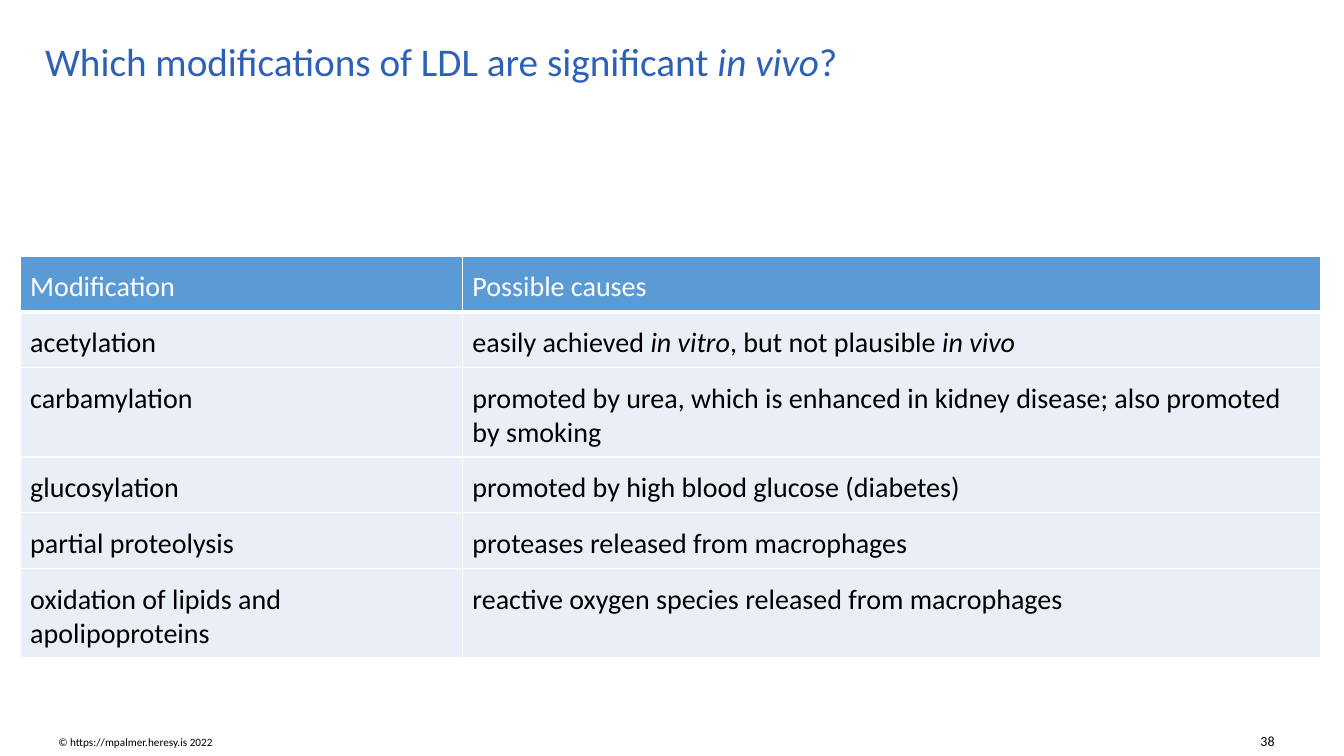
import pptx
import pptx.util
import pptx.dml.color
import pptx.enum.text
import pptx.oxml.ns
import lxml.etree

Inches = pptx.util.Inches
Pt = pptx.util.Pt
RGBColor = pptx.dml.color.RGBColor
Align = pptx.enum.text.PP_ALIGN
Anchor = pptx.enum.text.MSO_ANCHOR

TITLE_BLUE = RGBColor(0x2D, 0x61, 0xB7)
HEADER_BLUE = RGBColor(0x5B, 0x9B, 0xD5)
ROW_BLUE = RGBColor(0xEA, 0xEF, 0xF7)
WHITE = RGBColor(0xFF, 0xFF, 0xFF)
BLACK = RGBColor(0x00, 0x00, 0x00)
FONT = "Calibri"

# Words between asterisks are italic
TITLE = "Which modifications of LDL are significant *in vivo*?"
ROWS = [
    ("Modification", "Possible causes"),
    ("acetylation", "easily achieved *in vitro*, but not plausible *in vivo*"),
    ("carbamylation", "promoted by urea, which is enhanced in kidney disease; also promoted by smoking"),
    ("glucosylation", "promoted by high blood glucose (diabetes)"),
    ("partial proteolysis", "proteases released from macrophages"),
    ("oxidation of lipids and apolipoproteins", "reactive oxygen species released from macrophages"),
]
COLUMN_SHARES = (0.34, 0.66)


def write_text(paragraph, text, size, color):
    """Fill a paragraph, switching italics at each asterisk."""
    paragraph.font.name = FONT
    paragraph.font.size = Pt(size)
    paragraph.font.color.rgb = color
    paragraph.font.bold = False
    for index, part in enumerate(text.split("*")):
        if part:
            run = paragraph.add_run()
            run.text = part
            if index % 2:
                run.font.italic = True


def add_text(slide, box, text, size, color, anchor, align=Align.LEFT):
    shape = slide.shapes.add_textbox(*(Inches(length) for length in box))
    frame = shape.text_frame
    frame.word_wrap = True
    frame.vertical_anchor = anchor
    paragraph = frame.paragraphs[0]
    paragraph.alignment = align
    write_text(paragraph, text, size, color)
    return paragraph


def add_title(slide, box):
    paragraph = add_text(slide, box, TITLE, 28, TITLE_BLUE, Anchor.MIDDLE)
    paragraph.line_spacing = 0.9


def set_borders(cell, bottom_width):
    """Draw white cell borders, placed ahead of the cell's fill."""
    properties = cell._tc.get_or_add_tcPr()
    sides = {"lnL": 1, "lnR": 1, "lnT": 1, "lnB": bottom_width}
    for position, (side, width) in enumerate(sides.items()):
        line = lxml.etree.Element(pptx.oxml.ns.qn(f"a:{side}"), w=str(Pt(width)))
        fill = lxml.etree.SubElement(line, pptx.oxml.ns.qn("a:solidFill"))
        lxml.etree.SubElement(fill, pptx.oxml.ns.qn("a:srgbClr"), val=str(WHITE))
        properties.insert(position, line)


def add_modification_table(slide, box):
    left, top, width, height = box
    frame = slide.shapes.add_table(
        len(ROWS), len(COLUMN_SHARES), Inches(left), Inches(top), Inches(width), Inches(height))
    table = frame.table
    table.horz_banding = False
    for column, share in zip(table.columns, COLUMN_SHARES):
        column.width = Inches(width * share)
    for row_index, texts in enumerate(ROWS):
        is_header = row_index == 0
        for column_index, text in enumerate(texts):
            cell = table.cell(row_index, column_index)
            cell.margin_left = cell.margin_right = Inches(0.1)
            cell.margin_top, cell.margin_bottom = Inches(0.14), Inches(0.08)
            cell.fill.solid()
            cell.fill.fore_color.rgb = HEADER_BLUE if is_header else ROW_BLUE
            set_borders(cell, 3 if is_header else 1)
            write_text(cell.text_frame.paragraphs[0], text, 20, WHITE if is_header else BLACK)


def add_footer(slide, credit_box, number_box):
    add_text(slide, credit_box, "© https://mpalmer.heresy.is 2022", 8, BLACK, Anchor.BOTTOM)
    add_text(slide, number_box, "38", 10, BLACK, Anchor.BOTTOM, Align.RIGHT)


def main():
    presentation = pptx.Presentation()
    presentation.slide_width = Inches(13.33)
    presentation.slide_height = Inches(7.5)
    slide = presentation.slides.add_slide(presentation.slide_layouts[6])
    add_footer(slide, (0.48, 7.25, 3.14, 0.23), (12.04, 7.21, 0.7, 0.27))
    add_title(slide, (0.35, 0.24, 12.7, 0.78))
    add_modification_table(slide, (0.2, 2.54, 12.9, 3))
    presentation.save("out.pptx")


if __name__ == "__main__":
    main()
